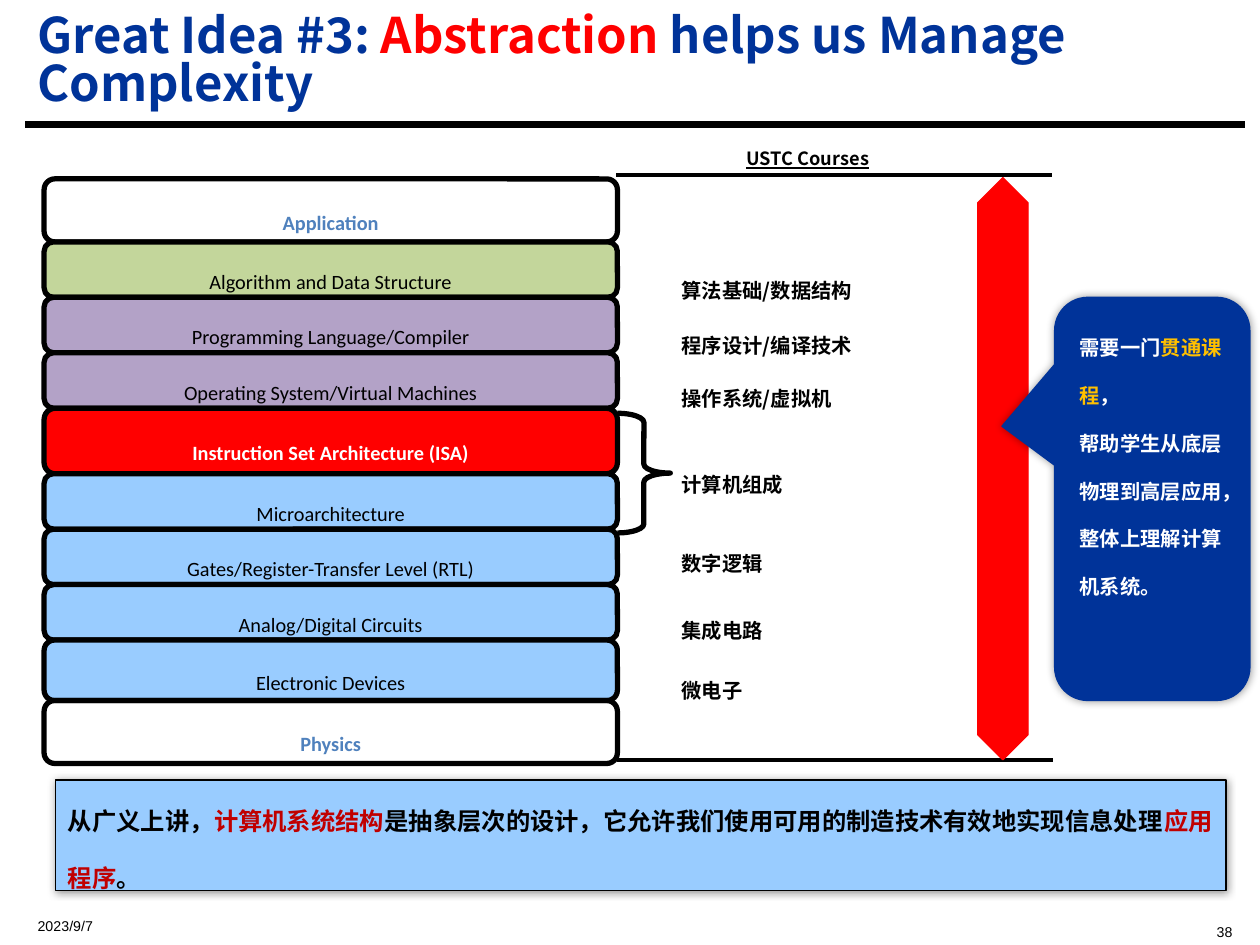
import pptx
import pptx.dml.color
import pptx.enum.shapes
import pptx.enum.text
import pptx.oxml
import pptx.oxml.ns
import pptx.util
from lxml import etree

Inches = pptx.util.Inches
Pt = pptx.util.Pt
RGB = pptx.dml.color.RGBColor.from_string
Shape = pptx.enum.shapes.MSO_SHAPE
Align = pptx.enum.text.PP_ALIGN
Anchor = pptx.enum.text.MSO_ANCHOR
qn = pptx.oxml.ns.qn

THEME = {
    "black": "000000", "white": "FFFFFF", "navy": "003399", "red": "FF0000",
    "crimson": "C00000", "gold": "FFC000", "blue": "4F81BD", "sky": "99CCFF",
    "green": "C3D69B", "purple": "B3A2C7",
    "title": 28, "summary": 24, "body": 20, "heading": 18, "footer": 14,
    "cjk": "Noto Sans CJK SC", "latin": "Calibri", "plain": "Arial",
}
SHADOW = (
    '<a:effectLst xmlns:a="http://schemas.openxmlformats.org/drawingml/2006/main">'
    '<a:outerShdw blurRad="63500" dist="0" dir="0" algn="ctr" rotWithShape="0">'
    '<a:srgbClr val="000000"><a:alpha val="40000"/></a:srgbClr>'
    '</a:outerShdw></a:effectLst>'
)


def write(box, lines, size, face="cjk", bold=True, underline=None, lowered=True,
          align=Align.LEFT, spacing=None, anchor=Anchor.TOP, wrap=True,
          insets=(0.1, 0.05, 0.1, 0.05)):
    frame = box.text_frame
    sides = ("margin_left", "margin_top", "margin_right", "margin_bottom")
    layout = dict(zip(sides, map(Inches, insets)))
    layout.update(vertical_anchor=anchor, word_wrap=wrap)
    for name, value in layout.items():
        setattr(frame, name, value)
    for index, line in enumerate(lines):
        para = frame.add_paragraph() if index else frame.paragraphs[0]
        para.alignment = align
        para.line_spacing = spacing
        for text, color in line:
            span = para.add_run()
            span.text = text
            style = {"size": Pt(THEME[size]), "name": THEME[face],
                     "bold": bold, "underline": underline}
            for name, value in style.items():
                setattr(span.font, name, value)
            span.font.color.rgb = RGB(THEME[color])
            properties = span._r.get_or_add_rPr()
            if lowered:
                properties.set("baseline", "-25000")
            latin = properties.find(qn("a:latin"))
            east = etree.Element(qn("a:ea"), typeface=THEME[face])
            latin.addnext(east)


def add_figure(kind, bounds, fill, line, weight, adjustments=(), shadow=False):
    figure = page.shapes.add_shape(kind, *map(Inches, bounds))
    figure.shadow.inherit = False
    for index, value in enumerate(adjustments):
        figure.adjustments[index] = value
    if fill:
        figure.fill.solid()
        figure.fill.fore_color.rgb = RGB(THEME[fill])
    else:
        figure.fill.background()
    figure.line.color.rgb = RGB(THEME[line])
    figure.line.width = Pt(weight)
    if shadow:
        effects = figure._element.spPr.find(qn("a:effectLst"))
        effects.getparent().replace(effects, pptx.oxml.parse_xml(SHADOW))
    return figure


deck = pptx.Presentation()
deck.slide_width = Inches(10)
deck.slide_height = Inches(7.5)
page = deck.slides.add_slide(deck.slide_layouts[6])

for left, right, top, weight in [
    (0.2, 9.88, 0.99, 3.75), (4.89, 8.35, 1.39, 2.25), (4.9, 8.36, 6.03, 2.25),
]:
    rule = page.shapes.add_connector(
        pptx.enum.shapes.MSO_CONNECTOR.STRAIGHT,
        Inches(left), Inches(top), Inches(right), Inches(top))
    rule.line.color.rgb = RGB(THEME["black"])
    rule.line.width = Pt(weight)
    etree.SubElement(rule._element.spPr, qn("a:effectLst"))

title = [("Great Idea #3: ", "navy"), ("Abstraction", "red"),
         (" helps us Manage Complexity", "navy")]
for bounds, line, settings in [
    ((0.2, 0.08, 9.67, 0.84), title,
     {"size": "title", "lowered": False, "spacing": 0.82, "anchor": Anchor.MIDDLE}),
    ((0.2, 7.15, 2.5, 0.27), [("2023/9/7", "black")],
     {"size": "footer", "face": "plain", "bold": False, "anchor": Anchor.MIDDLE}),
    ((6.88, 7.15, 3, 0.27), [("38", "black")],
     {"size": "footer", "face": "plain", "bold": False, "align": Align.RIGHT}),
    ((5.25, 0.95, 2.32, 0.4), [("USTC Courses", "black")],
     {"size": "heading", "underline": True, "align": Align.CENTER}),
]:
    write(page.shapes.add_textbox(*map(Inches, bounds)), [line], **settings)

top = 1.42
for name, height, fill, color, bold in [
    ("Application", 0.5, "white", "blue", True),
    ("Algorithm and Data Structure", 0.44, "green", "black", False),
    ("Programming Language/Compiler", 0.44, "purple", "black", False),
    ("Operating System/Virtual Machines", 0.44, "purple", "black", False),
    ("Instruction Set Architecture (ISA)", 0.52, "red", "white", True),
    ("Microarchitecture", 0.44, "sky", "black", False),
    ("Gates/Register-Transfer Level (RTL)", 0.44, "sky", "black", False),
    ("Analog/Digital Circuits", 0.44, "sky", "black", False),
    ("Electronic Devices", 0.48, "sky", "black", False),
    ("Physics", 0.5, None, "blue", True),
]:
    layer = add_figure(Shape.ROUNDED_RECTANGLE, (0.35, top, 4.55, height),
                       fill, "black", 3, [0.17])
    write(layer, [[(name, color)]], "body", "latin", bold,
          align=Align.CENTER, anchor=Anchor.MIDDLE, wrap=False)
    top += height

for course, top, width in [
    ("算法基础/数据结构", 1.97, 2.27), ("程序设计/编译技术", 2.41, 2.27),
    ("操作系统/虚拟机", 2.83, 2.02), ("计算机组成", 3.51, 1.41),
    ("数字逻辑", 4.14, 1.17), ("集成电路", 4.67, 1.17), ("微电子", 5.15, 0.92),
]:
    box = page.shapes.add_textbox(Inches(5.31), Inches(top), Inches(width), Inches(0.44))
    write(box, [[(course, "black")]], "body", wrap=False)

add_figure(Shape.RIGHT_BRACE, (4.9, 3.28, 0.42, 0.95), None, "black", 3, [0.17, 0.5])
add_figure(Shape.UP_DOWN_ARROW, (7.76, 1.41, 0.4, 4.62), "red", "red", 0.75, [0.5, 1.18])

callout = add_figure(Shape.ROUNDED_RECTANGULAR_CALLOUT, (8.37, 2.36, 1.55, 3.2),
                     "navy", "navy", 0.75, [-0.77, -0.18, 0.17], shadow=True)
write(callout, [
    [("需要一门", "white"), ("贯通课程", "gold"), ("，", "white")],
    [("帮助学生从底层物理到高层应用，整体上理解计算机系统。", "white")],
], "body", insets=(0.12, 0.04, 0.04, 0.04))

summary = add_figure(Shape.RECTANGLE, (0.44, 6.19, 9.29, 0.88),
                     "sky", "black", 0.75, shadow=True)
write(summary, [[
    ("从广义上讲，", "black"), ("计算机系统结构", "crimson"),
    ("是抽象层次的设计，它允许我们使用可用的制造技术有效地实现信息处理", "black"),
    ("应用程序", "crimson"), ("。", "black"),
]], "summary", anchor=Anchor.MIDDLE, insets=(0.1, 0.1, 0.1, 0.1))

deck.save("out.pptx")
